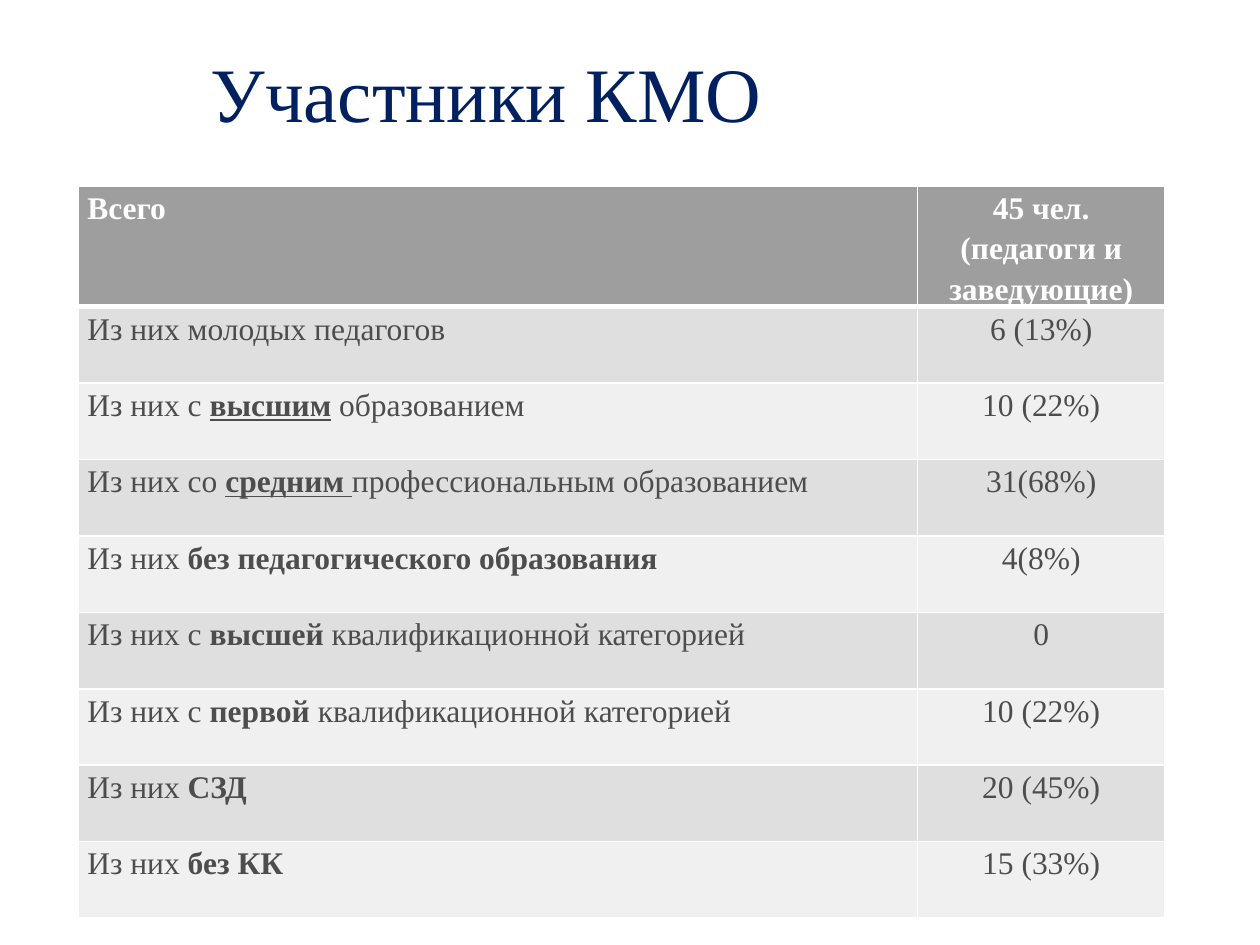
from dataclasses import dataclass

import lxml.etree
import pptx
import pptx.dml.color
import pptx.enum.text
import pptx.oxml.ns
import pptx.util

Cm = pptx.util.Cm
Align = pptx.enum.text.PP_ALIGN
Anchor = pptx.enum.text.MSO_ANCHOR


@dataclass(frozen=True)
class Theme:
    font: str = "Times New Roman"
    title_size: int = 44
    body_size: int = 18
    title_color: str = "002060"
    header_color: str = "FFFFFF"
    body_color: str = "4D4D4D"
    border_color: str = "FFFFFF"
    header_fill: str = "9E9E9E"
    band_fills: tuple = ("DFDFDF", "F0F0F0")
    line_spacing: float = 1.15
    thin_border: int = 1
    thick_border: int = 3


PLAIN, BOLD, UNDERLINED = "plain", "bold", "underlined"

HEADER = ("Всего", "45 чел. (педагоги и заведующие)")
MEMBERS = [
    ([("Из них молодых педагогов", PLAIN)], "6 (13%)"),
    ([("Из них с ", PLAIN), ("высшим", UNDERLINED), (" образованием", PLAIN)], "10 (22%)"),
    ([("Из них со ", PLAIN), ("средним ", UNDERLINED),
      ("профессиональным образованием", PLAIN)], "31(68%)"),
    ([("Из них ", PLAIN), ("без педагогического образования", BOLD)], "4(8%)"),
    ([("Из них с ", PLAIN), ("высшей", BOLD), (" квалификационной категорией", PLAIN)], "0"),
    ([("Из них с ", PLAIN), ("первой ", BOLD), ("квалификационной категорией", PLAIN)], "10 (22%)"),
    ([("Из них ", PLAIN), ("СЗД", BOLD)], "20 (45%)"),
    ([("Из них ", PLAIN), ("без КК", BOLD)], "15 (33%)"),
]


class SlideBuilder:
    def __init__(self, slide, theme):
        self.slide = slide
        self.theme = theme

    def add_run(self, paragraph, text, size, color, style=PLAIN):
        run = paragraph.add_run()
        run.text = text
        run.font.name = self.theme.font
        run.font.size = pptx.util.Pt(size)
        run.font.color.rgb = pptx.dml.color.RGBColor.from_string(color)
        run.font.bold = style != PLAIN
        run.font.underline = style == UNDERLINED

    def add_title(self, text, left, top, width, height):
        title = self.slide.shapes.title
        title.left, title.top, title.width, title.height = left, top, width, height
        title.text_frame.word_wrap = True
        title.text_frame.vertical_anchor = Anchor.MIDDLE
        paragraph = title.text_frame.paragraphs[0]
        paragraph.alignment = Align.LEFT
        self.add_run(paragraph, text, self.theme.title_size, self.theme.title_color)

    def add_border(self, cell, side, width):
        properties = cell._tc.get_or_add_tcPr()
        qualified = pptx.oxml.ns.qn
        line = lxml.etree.SubElement(properties, qualified(f"a:{side}"), w=str(pptx.util.Pt(width)))
        fill = lxml.etree.SubElement(line, qualified("a:solidFill"))
        lxml.etree.SubElement(fill, qualified("a:srgbClr"), val=self.theme.border_color)

    def fill_cell(self, cell, runs, alignment, color, fill, top_border, bottom_border):
        cell.margin_left = cell.margin_right = Cm(0.18)
        cell.margin_top = cell.margin_bottom = 0
        cell.vertical_anchor = Anchor.TOP
        paragraph = cell.text_frame.paragraphs[0]
        paragraph.alignment = alignment
        paragraph.line_spacing = self.theme.line_spacing
        for text, style in runs:
            self.add_run(paragraph, text, self.theme.body_size, color, style)
        thin = self.theme.thin_border
        for side, width in (("lnL", thin), ("lnR", thin), ("lnT", top_border), ("lnB", bottom_border)):
            self.add_border(cell, side, width)
        cell.fill.solid()
        cell.fill.fore_color.rgb = pptx.dml.color.RGBColor.from_string(fill)

    def add_table(self, header, members, left, top, column_widths, row_height):
        theme = self.theme
        rows = [([(header[0], BOLD)], [(header[1], BOLD)])]
        rows += [(runs, [(count, PLAIN)]) for runs, count in members]
        table = self.slide.shapes.add_table(
            len(rows), len(column_widths), left, top, sum(column_widths), row_height * len(rows)
        ).table
        for column, width in zip(table.columns, column_widths):
            column.width = width
        for index, row in enumerate(rows):
            table.rows[index].height = row_height
            is_header = index == 0
            color = theme.header_color if is_header else theme.body_color
            fill = theme.header_fill if is_header else theme.band_fills[(index - 1) % 2]
            top_border = theme.thick_border if index == 1 else theme.thin_border
            bottom_border = theme.thick_border if is_header else theme.thin_border
            for position, alignment in enumerate((Align.JUSTIFY, Align.CENTER)):
                self.fill_cell(table.cell(index, position), row[position], alignment,
                               color, fill, top_border, bottom_border)


def main():
    presentation = pptx.Presentation()
    presentation.slide_width = Cm(25.4)
    presentation.slide_height = Cm(19.05)
    slide = presentation.slides.add_slide(presentation.slide_layouts.get_by_name("Title Only"))
    builder = SlideBuilder(slide, Theme())
    builder.add_title("Участники КМО", Cm(3.99), Cm(1.22), Cm(20.14), Cm(1.27))
    builder.add_table(HEADER, MEMBERS, Cm(1.58), Cm(3.76), (Cm(16.92), Cm(4.98)), Cm(1.54))
    presentation.save("out.pptx")


if __name__ == "__main__":
    main()
